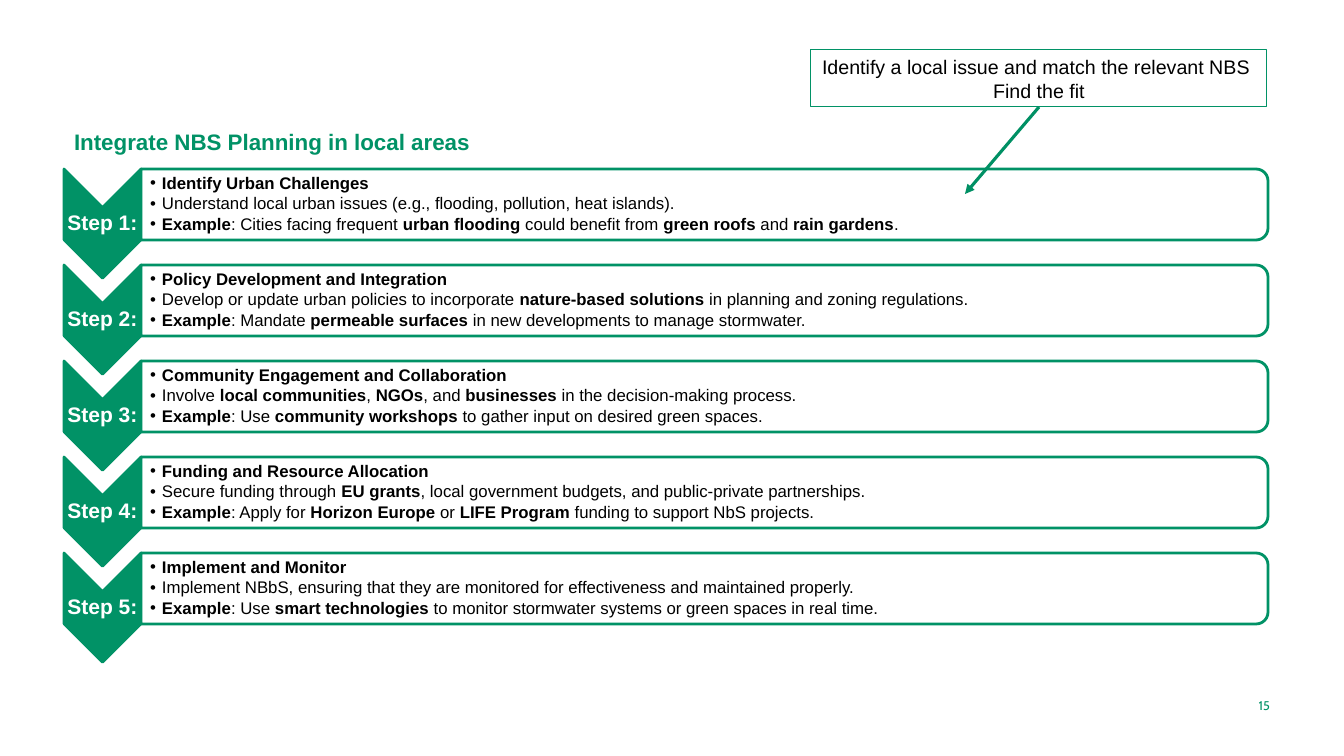
"""Build the slide on five steps for planning NBS in local areas."""
from dataclasses import dataclass
from typing import Any

from lxml.etree import SubElement
from pptx import Presentation
from pptx.dml.color import RGBColor
from pptx.enum.shapes import MSO_CONNECTOR as Link, MSO_SHAPE as Kind
from pptx.enum.text import MSO_ANCHOR as Anchor, MSO_AUTO_SIZE as Fit, PP_ALIGN as Align
from pptx.oxml.ns import qn
from pptx.util import Emu, Pt

GREEN = RGBColor(0x01, 0x92, 0x66)
DEEP = RGBColor(0x00, 0x90, 0x64)
WHITE = RGBColor(0xFF, 0xFF, 0xFF)
BLACK = RGBColor(0x00, 0x00, 0x00)
WIDE, HIGH, PITCH = 1344, 756, 96


@dataclass(frozen=True)
class Box:
    """Hold a frame in px."""
    left: int
    top: int
    width: int
    height: int

    def down(self, step: int) -> "Box":
        """Shift the frame to the row of a step."""
        return Box(self.left, self.top + step * PITCH, self.width, self.height)


@dataclass(frozen=True)
class Style:
    """Hold the look of a text."""
    size: int
    color: RGBColor
    bold: bool = False
    name: str = "Arial"
    align: Align = Align.LEFT
    anchor: Anchor = Anchor.MIDDLE
    inset: tuple[int, int] = (10, 5)
    space: float = 1.0
    after: float = 0
    bullet: bool = False
    wrap: bool = True


HEAD = Style(16, GREEN, bold=True, anchor=Anchor.BOTTOM)
LABEL = Style(15, WHITE, bold=True, align=Align.CENTER, inset=(1, 1), space=0.9)
LIST = Style(12, BLACK, inset=(9, 1), space=0.9, after=1.8, bullet=True)
NOTE = Style(14, BLACK, align=Align.CENTER, wrap=False)
PAGE = Style(9, GREEN, name="Cabin", align=Align.RIGHT)

STEPS = [
    ["**Identify Urban Challenges**",
     "Understand local urban issues (e.g., flooding, pollution, heat islands).",
     "**Example**: Cities facing frequent **urban flooding** could benefit from "
     "**green roofs** and **rain gardens**."],
    ["**Policy Development and Integration**",
     "Develop or update urban policies to incorporate **nature-based solutions** "
     "in planning and zoning regulations.",
     "**Example**: Mandate **permeable surfaces** in new developments to manage stormwater."],
    ["**Community Engagement and Collaboration**",
     "Involve **local communities**, **NGOs**, and **businesses** in the "
     "decision-making process.",
     "**Example**: Use **community workshops** to gather input on desired green spaces."],
    ["**Funding and Resource Allocation**",
     "Secure funding through **EU grants**, local government budgets, and "
     "public-private partnerships.",
     "**Example**: Apply for **Horizon Europe** or **LIFE Program** funding to "
     "support NbS projects."],
    ["**Implement and Monitor**",
     "Implement NBbS, ensuring that they are monitored for effectiveness and "
     "maintained properly.",
     "**Example**: Use **smart technologies** to monitor stormwater systems or "
     "green spaces in real time."],
]


def px(count: int) -> Emu:
    """Turn px into EMU."""
    return Emu(round(count * 63500 / 7))


def frame(box: Box) -> list[Emu]:
    """Give the frame of a box in EMU."""
    return [px(side) for side in (box.left, box.top, box.width, box.height)]


def put(target: Any, values: dict[str, Any]) -> None:
    """Set each value on the target."""
    for key, value in values.items():
        setattr(target, key, value)


def dot(para: Any) -> None:
    """Give a paragraph a hanging bullet."""
    prop = para._p.get_or_add_pPr()
    prop.set("marL", str(px(12)))
    prop.set("indent", str(-px(12)))
    SubElement(prop, qn("a:buFont"), typeface="Arial")
    SubElement(prop, qn("a:buChar"), char="•")


def write(shape: Any, lines: list[str], style: Style) -> None:
    """Fill a shape with lines, where double stars mark bold words."""
    text = shape.text_frame
    side, edge = style.inset
    put(text, {"word_wrap": style.wrap, "auto_size": Fit.NONE,
               "vertical_anchor": style.anchor,
               "margin_left": px(side), "margin_right": px(min(side, edge * 2)),
               "margin_top": px(edge), "margin_bottom": px(edge)})
    for num, line in enumerate(lines):
        para = text.add_paragraph() if num else text.paragraphs[0]
        if style.bullet:
            dot(para)
        put(para, {"alignment": style.align, "line_spacing": style.space,
                   "space_before": Pt(0), "space_after": Pt(style.after)})
        for part, words in enumerate(line.split("**")):
            if words:
                run = para.add_run()
                run.text = words
                put(run.font, {"size": Pt(style.size), "name": style.name,
                               "bold": style.bold or part % 2 == 1})
                run.font.color.rgb = style.color


def label(slide: Any, box: Box, lines: list[str], style: Style) -> None:
    """Add a text box."""
    write(slide.shapes.add_textbox(*frame(box)), lines, style)


def draw(slide: Any, kind: Kind, box: Box, fill: RGBColor | None,
         line: float = 2, turn: int = 0) -> Any:
    """Add a flat shape with a green edge."""
    shape = slide.shapes.add_shape(kind, *frame(box))
    shape.shadow.inherit = False
    shape.rotation = turn
    if fill is None:
        shape.fill.background()
    else:
        shape.fill.solid()
        shape.fill.fore_color.rgb = fill
    shape.line.color.rgb = GREEN
    shape.line.width = Pt(line)
    return shape


def step(slide: Any, row: int, lines: list[str]) -> None:
    """Add the chevron, bar and texts of one step."""
    draw(slide, Kind.CHEVRON, Box(48, 185, 109, 77).down(row), GREEN, turn=90)
    label(slide, Box(64, 208, 77, 32).down(row), [f"Step {row + 1}:"], LABEL)
    bar = draw(slide, Kind.ROUND_2_SAME_RECTANGLE,
               Box(669, -359, 71, 1127).down(row), WHITE, turn=90)
    tint = bar._element.spPr.find(qn("a:solidFill")).find(qn("a:srgbClr"))
    SubElement(tint, qn("a:alpha"), val="90000")
    label(slide, Box(141, 172, 1124, 65).down(row), lines, LIST)


def arrow(slide: Any, ends: tuple[int, int, int, int]) -> None:
    """Add an arrow between two points."""
    link = slide.shapes.add_connector(Link.STRAIGHT, *map(px, ends))
    link.line.color.rgb = DEEP
    link.line.width = Pt(2.25)
    SubElement(link.line._get_or_add_ln(), qn("a:tailEnd"), type="triangle")
    SubElement(link._element.spPr, qn("a:effectLst"))


def main() -> None:
    """Build and save the deck."""
    deck = Presentation()
    put(deck, {"slide_width": px(WIDE), "slide_height": px(HIGH)})
    slide = deck.slides.add_slide(deck.slide_layouts[5])
    title = slide.shapes.title
    put(title, dict(zip(("left", "top", "width", "height"), frame(Box(64, 108, 597, 52)))))
    write(title, ["Integrate NBS Planning in local areas"], HEAD)
    for row, lines in enumerate(STEPS):
        step(slide, row, lines)
    label(slide, Box(1164, 685, 116, 40), ["15"], PAGE)
    note = draw(slide, Kind.RECTANGLE, Box(811, 50, 456, 57), None, line=0.75)
    write(note, ["Identify a local issue and match the relevant NBS ", "Find the fit"], NOTE)
    arrow(slide, (1039, 107, 965, 194))
    deck.save("out.pptx")


if __name__ == "__main__":
    main()
